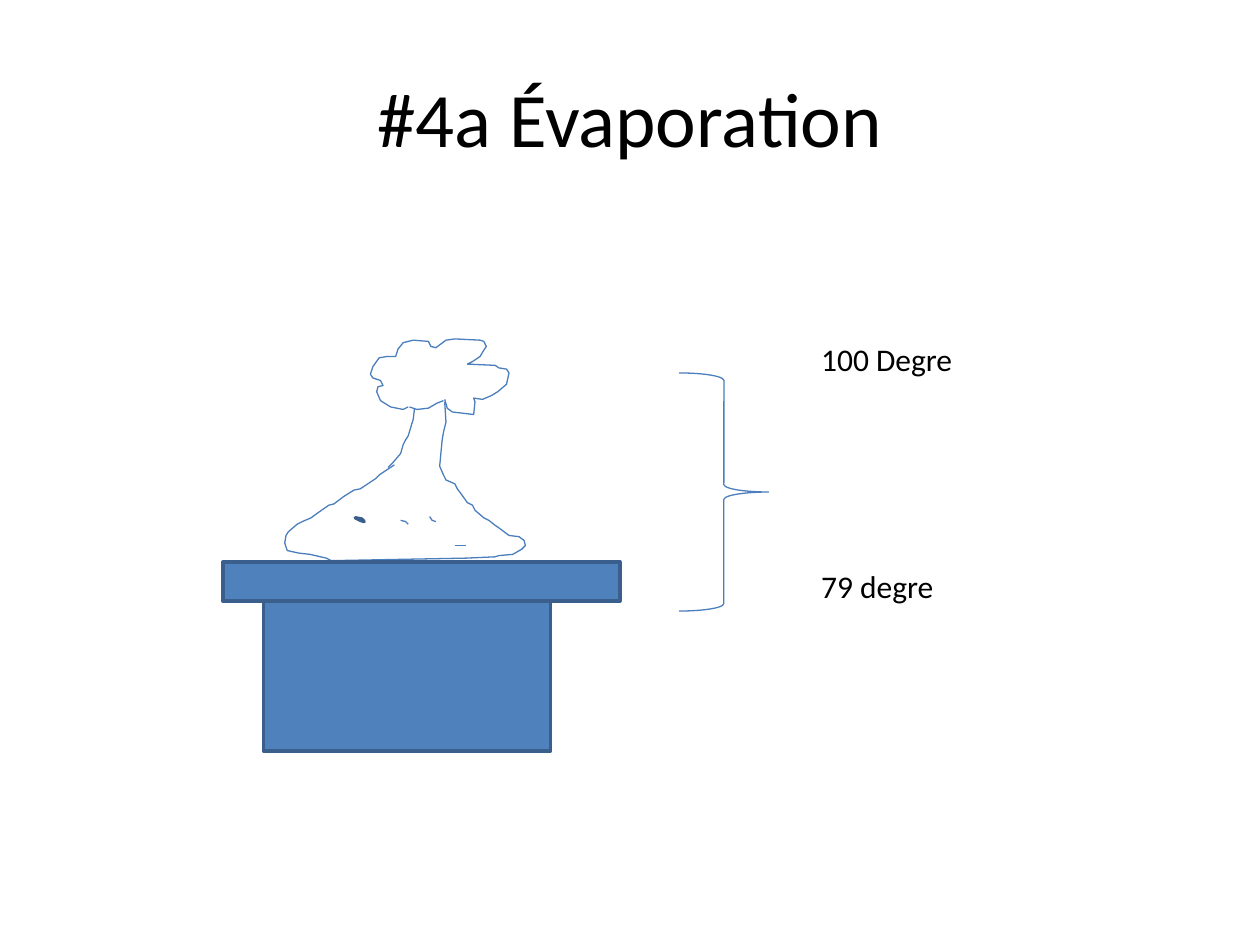
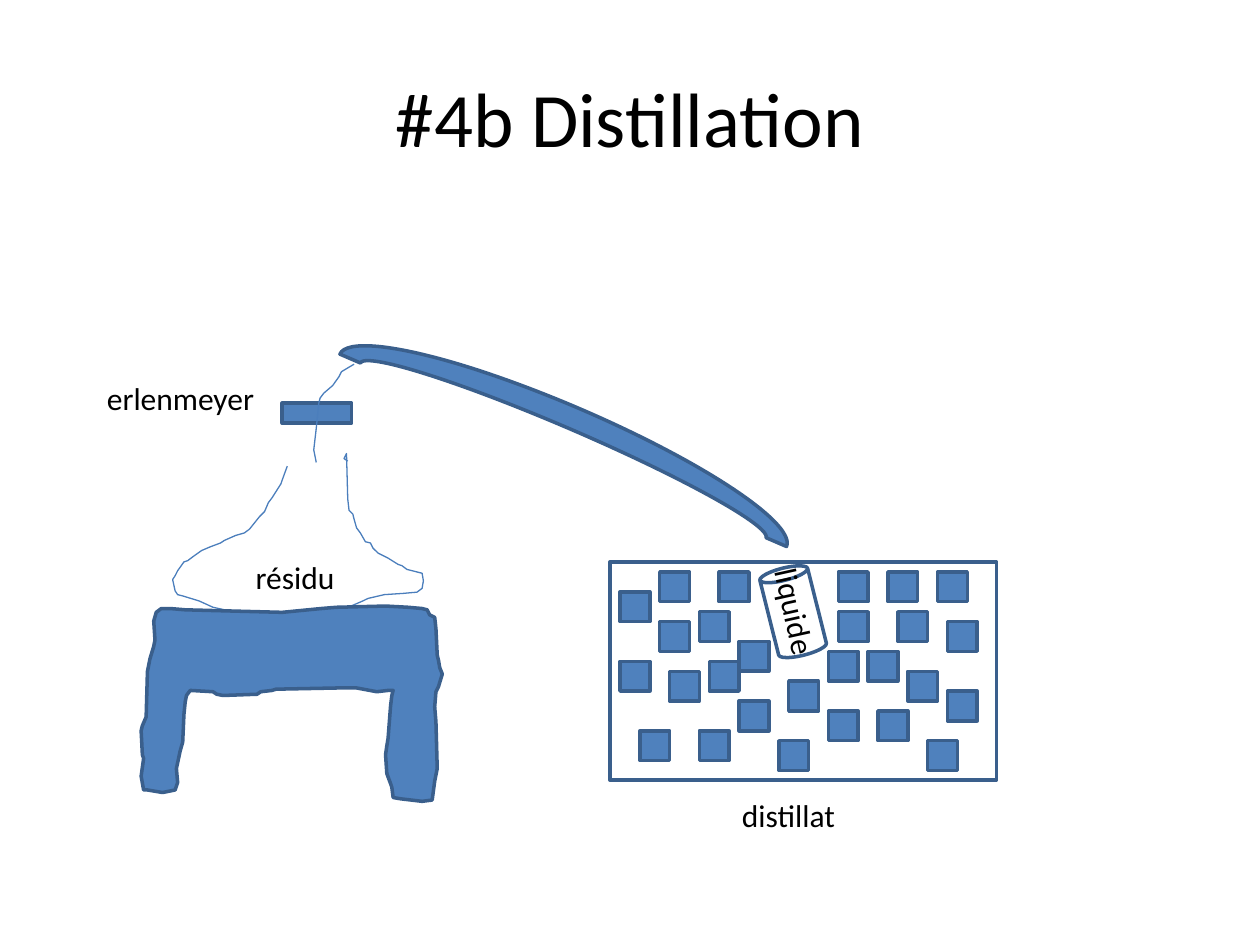
from pptx import Presentation
from pptx.dml.color import RGBColor
from pptx.enum import shapes, text
from pptx.util import Pt

FONT = "Calibri"
BLACK = RGBColor(0x00, 0x00, 0x00)
WHITE = RGBColor(0xFF, 0xFF, 0xFF)
BLUE = RGBColor(0x4F, 0x81, 0xBD)
EDGE_BLUE = RGBColor(0x3A, 0x5F, 0x8C)
SKETCH_BLUE = RGBColor(0x4B, 0x7E, 0xBC)
THIN, THICK = 0.75, 2

# Freehand outlines lie on a fine drawing grid with this step.
SKETCH_STEP = Pt(0.72)

# Evaporation
EVAPORATION_TITLE = "#4a Évaporation"
TEMPERATURES = ["100 Degre", "79 degre"]
TEMPERATURE_BOX = (462.2, 190.8, 96.5, 159.8)
TEMPERATURE_GAP = 108
STAND = (150.5, 321.1, 164.2, 108)
STAND_TOP = (127.4, 321.1, 226.8, 22.5)
BRACE = (388.1, 213.1, 51.1, 136.1)

FLASK = [
    (313, 369), (301, 377), (298, 380), (289, 386), (286, 388), (281, 389),
    (273, 394), (265, 400), (261, 401), (251, 408), (247, 411), (240, 414),
    (236, 416), (229, 422), (227, 425), (226, 431), (228, 437), (237, 439),
    (246, 440), (259, 443), (263, 445), (370, 443), (393, 442), (396, 441),
    (407, 440), (414, 436), (417, 433), (416, 429), (412, 426), (404, 425),
    (396, 419), (393, 417), (388, 413), (384, 411), (377, 405), (375, 401),
    (371, 399), (366, 392), (363, 388), (361, 384), (354, 381), (352, 377),
    (349, 370), (351, 349), (352, 343), (354, 335), (353, 319),
]
FLASK_NECK = [(308, 371), (312, 367), (318, 360), (320, 353), (322, 349),
              (324, 346), (327, 336), (328, 333), (329, 324)]
CLOUD = [
    (324, 323), (320, 325), (310, 323), (302, 318), (299, 311), (300, 307),
    (304, 306), (302, 302), (296, 300), (294, 297), (296, 291), (301, 284),
    (307, 283), (314, 283), (316, 277), (320, 272), (328, 270), (340, 271),
    (342, 275), (346, 276), (354, 270), (361, 269), (381, 270), (384, 271),
    (386, 275), (384, 278), (381, 283), (375, 287), (371, 289), (393, 290),
    (396, 292), (402, 293), (404, 296), (402, 305), (395, 311), (390, 314),
    (383, 317), (376, 316), (377, 319), (376, 329), (359, 327), (355, 324),
    (353, 317),
]
CLOUD_BASE = [(325, 323), (331, 325), (340, 324), (347, 320), (352, 318)]
GRAIN = [(282, 411), (286, 413), (289, 414), (287, 412)]
MARKS = [
    [(318, 413), (322, 414), (324, 416)],
    [(341, 410), (343, 413), (346, 414)],
    [(361, 433), (370, 433)],
]

# Distillation
DISTILLATION_TITLE = "#4b Distillation"
LABELS = [
    ("erlenmeyer", (54, 213.1, 102.2, 29), 0),
    ("résidu", (139, 315.4, 102.2, 29), 0),
    ("distillat", (416.9, 451.4, 169.9, 29), 0),
    ("liquide", (407.5, 353.5, 102.2, 29), 77.6),
]
CONDENSER = (182.9, 231.8, 277.9, 51.1)
ICE_BATH = (348.5, 321.1, 221, 124.6)
RECEIVER = (439.2, 324, 28.1, 51.1)
STOPPER = (161.3, 230.4, 39.6, 11.5)

# Ice cubes: column and row on a grid that starts inside the bath.
ICE_LEFT, ICE_TOP, ICE_STEP = 354.33, 326.9, 5.67
ICE_SIZE = 3 * ICE_STEP
ICE_CUBES = [
    (0, 2), (4, 5), (8, 4), (0, 9), (5, 10), (9, 9), (4, 0), (10, 0), (12, 7),
    (17, 11), (21, 8), (22, 4), (25, 8), (2, 16), (8, 16), (12, 13), (29, 10),
    (33, 5), (28, 4), (32, 0), (27, 0), (22, 0), (31, 17), (16, 17), (26, 14),
    (21, 14), (33, 12),
]

ERLENMEYER = [
    (228, 370), (224, 381), (223, 384), (216, 395), (213, 399), (210, 406),
    (206, 410), (198, 420), (194, 423), (187, 425), (178, 429), (175, 431),
    (167, 434), (160, 437), (153, 442), (149, 445), (146, 446), (141, 453),
    (139, 457), (137, 460), (139, 469), (141, 472), (145, 473), (158, 477),
    (169, 482), (178, 484), (182, 486), (247, 487), (271, 484), (281, 480),
    (288, 477), (292, 475), (305, 472), (320, 471), (331, 470), (335, 467),
    (336, 461), (335, 455), (323, 452), (319, 449), (316, 448), (308, 443),
    (300, 439), (296, 435), (294, 431), (290, 430), (286, 423), (283, 419),
    (281, 412), (280, 408), (277, 405), (276, 396), (275, 360), (273, 364),
    (276, 366),
]
TABLE = [
    (117, 627), (129, 629), (139, 627), (141, 621), (140, 610), (143, 596),
    (145, 589), (146, 567), (147, 557), (148, 552), (151, 548), (169, 549),
    (172, 551), (177, 552), (204, 551), (207, 549), (216, 548), (219, 547),
    (269, 546), (283, 546), (299, 549), (308, 548), (312, 548), (311, 552),
    (310, 560), (308, 586), (307, 592), (306, 599), (307, 614), (310, 622),
    (311, 625), (312, 633), (318, 634), (335, 636), (343, 635), (345, 620),
    (347, 610), (346, 573), (345, 561), (346, 549), (348, 545), (351, 535),
    (349, 530), (348, 524), (347, 520), (346, 499), (345, 490), (341, 488),
    (339, 484), (335, 483), (324, 482), (306, 481), (267, 482), (255, 483),
    (224, 486), (147, 484), (135, 483), (128, 483), (124, 486), (122, 493),
    (123, 508), (122, 513), (119, 523), (117, 533), (116, 569), (113, 576),
    (112, 580), (113, 599), (114, 602), (112, 616), (114, 627),
]
VAPOUR_TUBE = [(251, 367), (249, 357), (251, 340), (253, 320), (254, 316),
               (257, 312), (264, 306), (269, 299), (271, 295), (281, 289)]


def paint(shape, fill, line, width):
    shape.shadow.inherit = False
    if fill is None:
        shape.fill.background()
    else:
        shape.fill.solid()
        shape.fill.fore_color.rgb = fill
    shape.line.color.rgb = line
    shape.line.width = Pt(width)


def format_paragraph(paragraph, size, alignment):
    paragraph.alignment = alignment
    for run in paragraph.runs:
        run.font.name = FONT
        run.font.size = Pt(size)
        run.font.color.rgb = BLACK


def add_preset(slide, kind, box, fill=BLUE, line=EDGE_BLUE, width=THICK, rotation=0):
    shape = slide.shapes.add_shape(kind, *map(Pt, box))
    shape.rotation = rotation
    paint(shape, fill, line, width)


def add_outline(slide, points):
    """Draw an open, unfilled freehand line."""
    builder = slide.shapes.build_freeform(*points[0], scale=SKETCH_STEP)
    builder.add_line_segments(points[1:], close=False)
    paint(builder.convert_to_shape(), None, SKETCH_BLUE, THIN)


def add_solid(slide, points):
    """Draw a closed, filled freehand area."""
    builder = slide.shapes.build_freeform(*points[0], scale=SKETCH_STEP)
    builder.add_line_segments(points[1:], close=True)
    paint(builder.convert_to_shape(), BLUE, EDGE_BLUE, THICK)


def add_label(slide, lines, box, rotation=0, gap=0):
    label = slide.shapes.add_textbox(*map(Pt, box))
    label.rotation = rotation
    frame = label.text_frame
    frame.word_wrap = True
    frame.text = "\n".join(lines)
    for paragraph in frame.paragraphs:
        format_paragraph(paragraph, 18, text.PP_ALIGN.LEFT)
    for paragraph in frame.paragraphs[1:]:
        paragraph.space_before = Pt(gap)


def add_titled_slide(presentation, words):
    slide = presentation.slides.add_slide(presentation.slide_layouts[5])
    title = slide.shapes.title
    title.left, title.top, title.width, title.height = map(Pt, (36, 21.6, 648, 90))
    title.text_frame.text = words
    title.text_frame.vertical_anchor = text.MSO_ANCHOR.MIDDLE
    format_paragraph(title.text_frame.paragraphs[0], 44, text.PP_ALIGN.CENTER)
    return slide


def build_evaporation(presentation):
    slide = add_titled_slide(presentation, EVAPORATION_TITLE)
    kinds = shapes.MSO_SHAPE
    for points in [FLASK, FLASK_NECK, CLOUD, CLOUD_BASE, *MARKS]:
        add_outline(slide, points)
    add_solid(slide, GRAIN)
    for box in (STAND, STAND_TOP):
        add_preset(slide, kinds.RECTANGLE, box)
    add_preset(slide, kinds.RIGHT_BRACE, BRACE, None, SKETCH_BLUE, THIN)
    add_label(slide, TEMPERATURES, TEMPERATURE_BOX, gap=TEMPERATURE_GAP)


def build_distillation(presentation):
    slide = add_titled_slide(presentation, DISTILLATION_TITLE)
    kinds = shapes.MSO_SHAPE
    add_outline(slide, ERLENMEYER)
    add_solid(slide, TABLE)
    add_preset(slide, kinds.BLOCK_ARC, CONDENSER, rotation=23.3)
    add_preset(slide, kinds.RECTANGLE, ICE_BATH, WHITE)
    add_preset(slide, kinds.CAN, RECEIVER, WHITE, rotation=345.9)
    for column, row in ICE_CUBES:
        left, top = ICE_LEFT + column * ICE_STEP, ICE_TOP + row * ICE_STEP
        add_preset(slide, kinds.RECTANGLE, (left, top, ICE_SIZE, ICE_SIZE))
    add_preset(slide, kinds.RECTANGLE, STOPPER)
    add_outline(slide, VAPOUR_TUBE)
    for words, box, rotation in LABELS:
        add_label(slide, [words], box, rotation)


def main():
    presentation = Presentation()
    presentation.slide_width, presentation.slide_height = Pt(720), Pt(540)
    build_evaporation(presentation)
    build_distillation(presentation)
    presentation.save("out.pptx")


if __name__ == "__main__":
    main()
